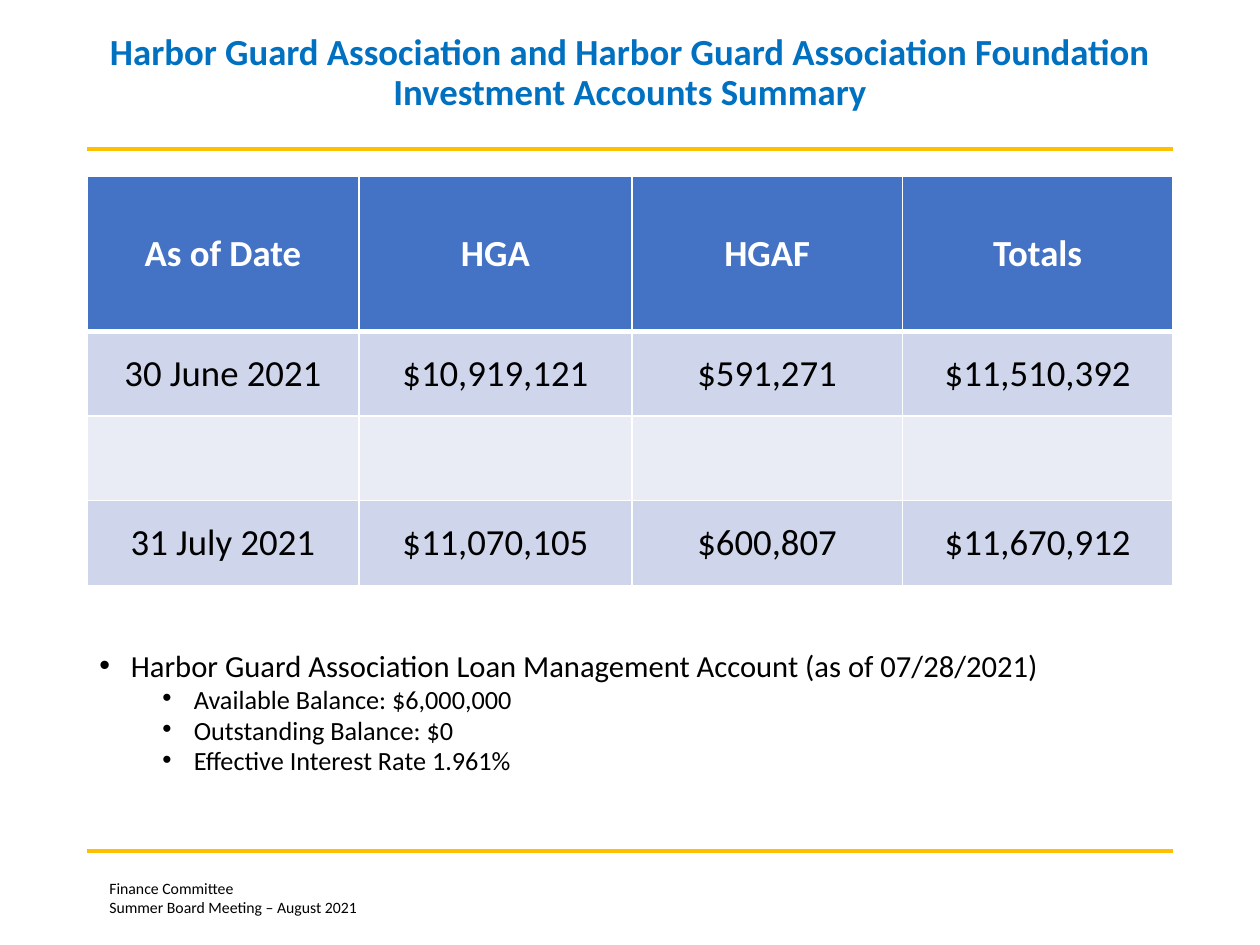
import pptx
import pptx.util
import pptx.dml.color
import pptx.enum.shapes
import pptx.enum.text
import pptx.oxml.ns
from lxml import etree

Pt = pptx.util.Pt
RGB = pptx.dml.color.RGBColor
ALIGN = pptx.enum.text.PP_ALIGN
ANCHOR = pptx.enum.text.MSO_ANCHOR
qn = pptx.oxml.ns.qn

# Content
TITLE = ("Harbor Guard Association and Harbor Guard Association Foundation "
         "Investment Accounts Summary")
ACCOUNTS = [
    ("As of Date", "HGA", "HGAF", "Totals"),
    ("30 June 2021", "$10,919,121", "$591,271", "$11,510,392"),
    ("", "", "", ""),
    ("31 July 2021", "$11,070,105", "$600,807", "$11,670,912"),
]
LOAN_NOTES = [
    (0, "Harbor Guard Association Loan Management Account (as of 07/28/2021)"),
    (1, "Available Balance: $6,000,000"),
    (1, "Outstanding Balance: $0"),
    (1, "Effective Interest Rate 1.961%"),
]
FOOTER = ["Finance Committee", "Summer Board Meeting – August 2021"]

# Style
FONT = "Calibri"
BLACK, WHITE = RGB(0, 0, 0), RGB(255, 255, 255)
TITLE_BLUE, GOLD = RGB(0x00, 0x70, 0xC0), RGB(0xFF, 0xC0, 0x00)
HEADER_FILL = RGB(0x44, 0x72, 0xC4)
BAND_FILLS = [RGB(0xE9, 0xEB, 0xF5), RGB(0xCF, 0xD5, 0xEA)]

# Layout, in points
LEFT, WIDTH = 49.7, 620.6
RULE_TOPS = (85, 486.5)
COLUMN_WIDTHS = (155.4, 156, 154.6, 154.6)
ROW_HEIGHTS = (88.5, 48.4, 48.4, 48.4)
NOTE_LEVELS = [(17.5, 18, 0), (15, 54, 5)]  # size, indent, space before
HANGING = 18

deck = pptx.Presentation()
deck.slide_width, deck.slide_height = Pt(720), Pt(540)
slide = deck.slides.add_slide(deck.slide_layouts[6])


def style(paragraph, size, color, bold=False):
    font = paragraph.font
    font.name, font.size, font.bold = FONT, Pt(size), bold
    font.color.rgb = color


def add_text_frame(left, top, width, height):
    frame = slide.shapes.add_textbox(Pt(left), Pt(top), Pt(width), Pt(height)).text_frame
    frame.word_wrap = True
    return frame


def add_paragraph(frame, index, text):
    paragraph = frame.add_paragraph() if index else frame.paragraphs[0]
    paragraph.text = text
    return paragraph


def set_border(cell, side, weight):
    border = etree.SubElement(cell._tc.get_or_add_tcPr(), qn(f"a:ln{side}"),
                              w=str(Pt(weight)))
    fill = etree.SubElement(border, qn("a:solidFill"))
    etree.SubElement(fill, qn("a:srgbClr"), val=str(WHITE))


# Gold rules
for top in RULE_TOPS:
    rule = slide.shapes.add_connector(pptx.enum.shapes.MSO_CONNECTOR.STRAIGHT,
                                      Pt(LEFT), Pt(top), Pt(LEFT + WIDTH), Pt(top))
    rule.line.color.rgb = GOLD
    rule.line.width = Pt(2.25)
    etree.SubElement(rule._element.spPr, qn("a:effectLst"))

# Title
title_frame = add_text_frame(LEFT, 11.5, WIDTH, 61.2)
title_frame.vertical_anchor = ANCHOR.MIDDLE
title = add_paragraph(title_frame, 0, TITLE)
title.alignment, title.line_spacing = ALIGN.CENTER, 0.9
style(title, 21, TITLE_BLUE, bold=True)

# Accounts table
accounts = slide.shapes.add_table(len(ACCOUNTS), len(COLUMN_WIDTHS), Pt(LEFT), Pt(100.8),
                                  Pt(WIDTH), Pt(sum(ROW_HEIGHTS))).table
for column, width in zip(accounts.columns, COLUMN_WIDTHS):
    column.width = Pt(width)
for r, (values, height) in enumerate(zip(ACCOUNTS, ROW_HEIGHTS)):
    accounts.rows[r].height = Pt(height)
    header = r == 0
    for c, value in enumerate(values):
        cell = accounts.cell(r, c)
        cell.margin_left = cell.margin_right = Pt(5)
        cell.margin_top = cell.margin_bottom = Pt(3)
        cell.vertical_anchor = ANCHOR.MIDDLE
        for side, weight in (("L", 1), ("R", 1), ("T", 3 if r == 1 else 1),
                             ("B", 3 if header else 1)):
            set_border(cell, side, weight)
        cell.fill.solid()
        cell.fill.fore_color.rgb = HEADER_FILL if header else BAND_FILLS[r % 2]
        entry = add_paragraph(cell.text_frame, 0, value)
        entry.alignment = ALIGN.CENTER
        style(entry, 21, WHITE if header else BLACK, bold=header)

# Loan notes
notes_frame = add_text_frame(LEFT, 372, WIDTH, 97.9)
for i, (level, text) in enumerate(LOAN_NOTES):
    size, indent, space_before = NOTE_LEVELS[level]
    note = add_paragraph(notes_frame, i, text)
    note.level, note.line_spacing = level, 0.7
    note.space_before = Pt(space_before)
    properties = note._p.get_or_add_pPr()
    properties.set("marL", str(Pt(indent)))
    properties.set("indent", str(-Pt(HANGING)))
    etree.SubElement(properties, qn("a:buFont"), typeface="Arial")
    etree.SubElement(properties, qn("a:buChar"), char="•")
    style(note, size, BLACK)

# Footer
footer_frame = add_text_frame(55.4, 498.7, 234, 29.5)
for i, text in enumerate(FOOTER):
    style(add_paragraph(footer_frame, i, text), 9, BLACK)

deck.save("out.pptx")
